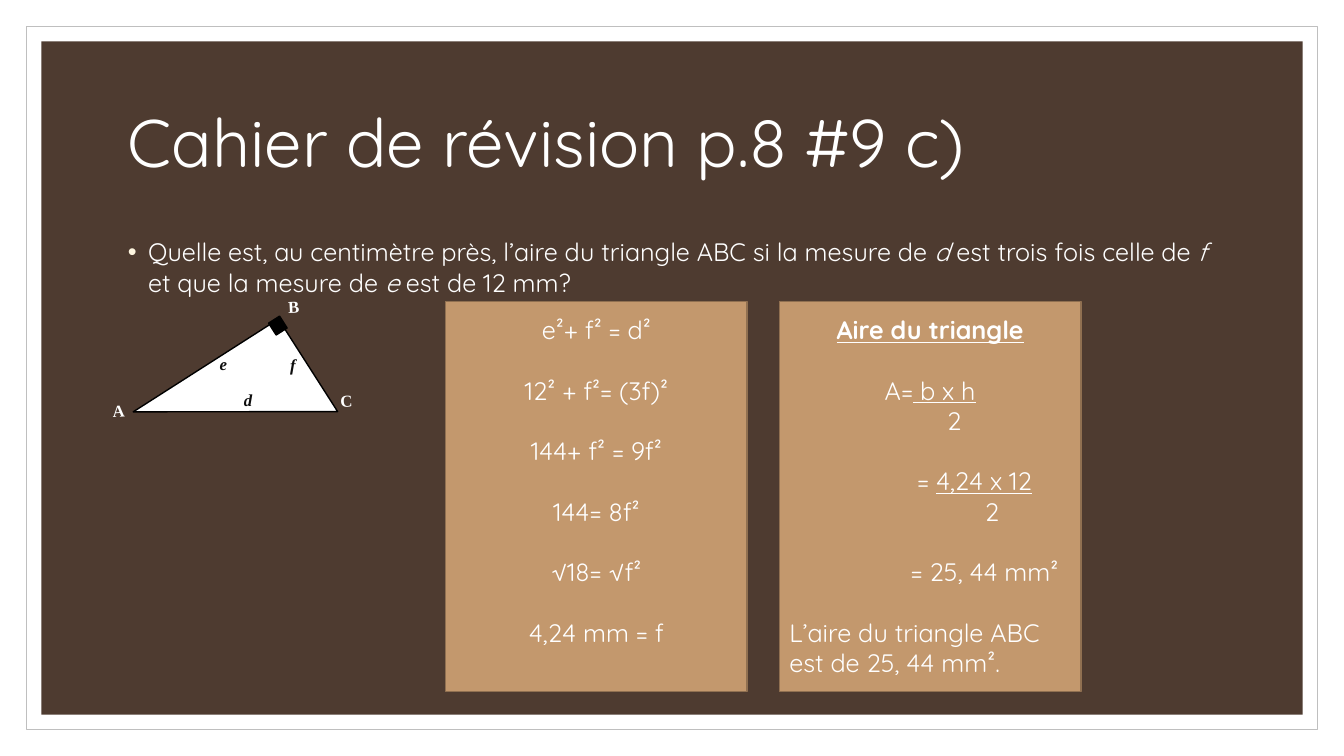
from lxml import etree
from pptx import Presentation
from pptx.dml.color import RGBColor
from pptx.enum.shapes import MSO_SHAPE
from pptx.enum.text import MSO_ANCHOR, PP_ALIGN
from pptx.oxml.ns import qn
from pptx.util import Inches, Pt

RECT, RIGHT_TRIANGLE = MSO_SHAPE.RECTANGLE, MSO_SHAPE.RIGHT_TRIANGLE
TOP, MIDDLE = MSO_ANCHOR.TOP, MSO_ANCHOR.MIDDLE
LEFT, CENTER = PP_ALIGN.LEFT, PP_ALIGN.CENTER
WHITE, BLACK, BROWN, TAN = "FFFFFF", "000000", "4E3B30", "C3986D"
BODY = {"name": "Quicksand", "size": Pt(18)}
LABEL = {"name": "Times New Roman", "size": Pt(12), "bold": True}
ITALIC, UNDERLINE = {"italic": True}, {"underline": True}
LINE_GAP = 21.6  # one empty line of body text, in points


def colour(hex_value):
    return RGBColor.from_string(hex_value)


def add_panel(page, box, fill, line=None, width=1, kind=RECT, rotation=0):
    panel = page.shapes.add_shape(kind, *map(Inches, box))
    panel.shadow.inherit = False
    panel.rotation = rotation
    panel.fill.solid()
    panel.fill.fore_color.rgb = colour(fill)
    if line:
        panel.line.color.rgb = colour(line)
        panel.line.width = Pt(width)
    else:
        panel.line.fill.background()
    return panel


def add_text(page, box, anchor=TOP):
    frame = page.shapes.add_textbox(*map(Inches, box)).text_frame
    frame.word_wrap = True
    frame.vertical_anchor = anchor
    return frame


def write(para, spans, base, hex_value=WHITE, align=LEFT):
    para.alignment = align
    for text, style in spans:
        span = para.add_run()
        span.text = text
        span.font.color.rgb = colour(hex_value)
        for name, value in {**base, **style}.items():
            setattr(span.font, name, value)


def set_indent(para, left, first=0):
    properties = para._p.get_or_add_pPr()
    properties.set("marL", str(Inches(left)))
    properties.set("indent", str(Inches(first)))
    return properties


def add_background(page, width, height):
    for inset, fill, line in ((0.26, WHITE, "BFBFBF"), (0.41, BROWN, None)):
        box = (inset, inset, width - 2 * inset, height - 2 * inset)
        add_panel(page, box, fill, line, 0.5)


def add_title(page, box):
    para = add_text(page, box, MIDDLE).paragraphs[0]
    para.line_spacing = 0.9
    write(para, [("Cahier de révision p.8 #9 c)", {})], {**BODY, "size": Pt(48)})


def add_question(page, box):
    para = add_text(page, box).paragraphs[0]
    para.space_before = Pt(9)
    write(para, [
        ("Quelle est, au centimètre près, l’aire du triangle ABC si la mesure de ", {}),
        ("d", ITALIC), (" est trois fois celle de ", {}), ("f ", ITALIC),
        ("et que la mesure de ", {}), ("e", ITALIC), (" est de 12 mm?", {}),
    ], BODY)
    properties = set_indent(para, 0.2, -0.2)
    bullet_colour = etree.SubElement(properties, qn("a:buClr"))
    etree.SubElement(bullet_colour, qn("a:srgbClr"), val="FDF5DF")
    etree.SubElement(properties, qn("a:buFont"), typeface="Arial")
    etree.SubElement(properties, qn("a:buChar"), char="•")


def add_triangle(page, left, top):
    # Triangle and right-angle mark share one rotation
    for x, y, width, height, fill, kind in (
        (0.46, 0.65, 1.71, 1.09, WHITE, RIGHT_TRIANGLE),
        (1.67, 0.27, 0.13, 0.14, BLACK, RECT),
    ):
        add_panel(page, (left + x, top + y, width, height), fill, BLACK,
                  kind=kind, rotation=147.4)
    # Vertices in white, side names in dark italics
    vertices = (("A", 0, 1.03), ("B", 1.74, 0), ("C", 2.26, 0.93))
    sides = (("e", 1.06, 0.57), ("f", 1.76, 0.58), ("d", 1.3, 0.93))
    for labels, style, hex_value, rotation in (
        (vertices, {}, WHITE, 357.4), (sides, ITALIC, "0D0D0D", 0),
    ):
        for text, x, y in labels:
            frame = add_text(page, (left + x, top + y, 0.55, 0.39))
            frame._parent.rotation = rotation
            write(frame.paragraphs[0], [(text, style)], LABEL, hex_value)


def add_solution(page, box, lines):
    """Each line holds spans, left indent, blank lines before, alignment."""
    frame = add_panel(page, box, TAN, "907051").text_frame
    frame.word_wrap = True
    frame.vertical_anchor = TOP
    frame.margin_top = Inches(0.13)
    for index, (spans, indent, gap, align) in enumerate(lines):
        para = frame.add_paragraph() if index else frame.paragraphs[0]
        para.space_before = Pt(gap * LINE_GAP)
        set_indent(para, indent)
        write(para, spans, BODY, align=align)


def build_page(deck, width, height):
    page = deck.slides.add_slide(deck.slide_layouts[6])
    add_background(page, width, height)
    add_title(page, (1.17, 0.7, 11, 1.5))
    add_question(page, (1.17, 2.3, 11, 4.3))
    add_triangle(page, 1.02, 2.89)

    equations = ("e²+ f² = d²", "12² + f²= (3f)²", "144+ f² = 9f²",
                 "144= 8f²", "√18= √f²", "4,24 mm = f")
    steps = [([(text, {})], 0, int(index > 0), CENTER)
             for index, text in enumerate(equations)]
    area = [
        ([("Aire du triangle", {"bold": True, **UNDERLINE})], 0, 0, CENTER),
        ([("A=", {}), (" b x h", UNDERLINE)], 0, 1, CENTER),
        ([("2", {})], 0.48, 0, CENTER),
        ([("= ", {}), ("4,24 x 12", UNDERLINE)], 0.88, 1, CENTER),
        ([("2", {})], 1.23, 0, CENTER),
        ([("= 25, 44 mm²", {})], 1.08, 1, CENTER),
        ([("L’aire du triangle ABC est de 25, 44 mm².", {})], 0, 1, LEFT),
    ]
    for column, lines in enumerate((steps, area)):
        add_solution(page, (4.42 + 3.31 * column, 2.99, 2.99, 3.87), lines)


def main():
    width, height = 13.33, 7.5
    deck = Presentation()
    deck.slide_width, deck.slide_height = Inches(width), Inches(height)
    build_page(deck, width, height)
    deck.save("out.pptx")


if __name__ == "__main__":
    main()
